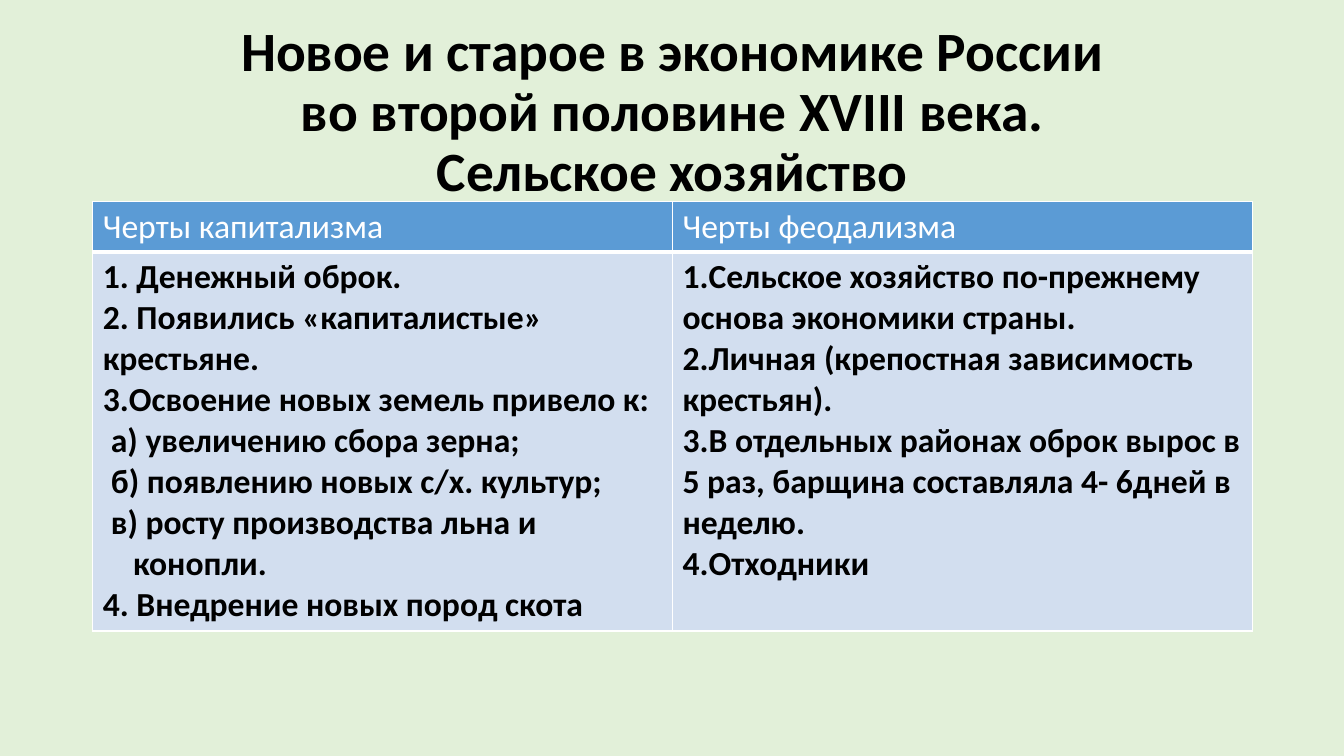
from lxml import etree
from pptx import Presentation
from pptx.dml.color import RGBColor
from pptx.enum.text import MSO_ANCHOR, PP_ALIGN
from pptx.oxml.ns import qn
from pptx.util import Inches, Pt

CENTER, LEFT = PP_ALIGN.CENTER, PP_ALIGN.LEFT
MIDDLE = MSO_ANCHOR.MIDDLE
COLORS = {"background": "E2F0D9", "header": "5B9BD5", "body": "D2DEEF",
          "white": "FFFFFF", "black": "000000"}
WIDTH, HEIGHT = 13.33, 7.5
MARGIN = 0.92
CONTENT_WIDTH = 11.5
ROW_HEIGHTS = [0.5, 3.76]


def write(paragraph, text, size=24, color="black", bold=True, align=LEFT,
          line_spacing=1.0, indent=0):
    paragraph.text = text
    paragraph.alignment = align
    paragraph.line_spacing = line_spacing
    if indent:
        paragraph._p.get_or_add_pPr().set("marL", str(Inches(indent)))
    for run in paragraph.runs:
        run.font.name = "Calibri"
        run.font.size = Pt(size)
        run.font.bold = bold
        run.font.color.rgb = RGBColor.from_string(COLORS[color])


def set_borders(cell, widths):
    properties = cell._tc.get_or_add_tcPr()
    for position, (side, width) in enumerate(zip("LRTB", widths)):
        line = etree.Element(qn(f"a:ln{side}"), w=str(Pt(width)))
        fill = etree.SubElement(line, qn("a:solidFill"))
        etree.SubElement(fill, qn("a:srgbClr"), val=COLORS["white"])
        properties.insert(position, line)


# Slide
presentation = Presentation()
presentation.slide_width = Inches(WIDTH)
presentation.slide_height = Inches(HEIGHT)
slide = presentation.slides.add_slide(presentation.slide_layouts[6])
slide.background.fill.solid()
slide.background.fill.fore_color.rgb = RGBColor.from_string(COLORS["background"])

# Title
title = slide.shapes.add_textbox(Inches(MARGIN), Inches(0.4),
                                 Inches(CONTENT_WIDTH), Inches(1.45))
title.text_frame.word_wrap = True
title.text_frame.vertical_anchor = MIDDLE
write(title.text_frame.paragraphs[0],
      "Новое и старое в экономике России\vво второй половине XVIII века.\v"
      "Сельское хозяйство",
      size=39.6, align=CENTER, line_spacing=0.9)

# Table content: header, then (text, indent) items
columns = [
    ("Черты капитализма", [
        ("1. Денежный оброк.", 0),
        ("2. Появились «капиталистые» крестьяне.", 0),
        ("3.Освоение новых земель привело к:", 0),
        ("а) увеличению сбора зерна;", 0.08),
        ("б) появлению новых с/х. культур;", 0.08),
        ("в) росту производства льна и", 0.08),
        ("конопли.", 0.3),
        ("4. Внедрение новых пород скота", 0),
    ]),
    ("Черты феодализма", [
        ("1.Сельское хозяйство по-прежнему основа экономики страны.", 0),
        ("2.Личная (крепостная зависимость крестьян).", 0),
        ("3.В отдельных районах оброк вырос в 5 раз, барщина составляла "
         "4- 6дней в неделю.", 0),
        ("4.Отходники", 0),
    ]),
]

# Table
table = slide.shapes.add_table(
    len(ROW_HEIGHTS), len(columns), Inches(MARGIN), Inches(2),
    Inches(CONTENT_WIDTH), Inches(sum(ROW_HEIGHTS))).table
for row, height in zip(table.rows, ROW_HEIGHTS):
    row.height = Inches(height)

for column, (heading, items) in enumerate(columns):
    table.columns[column].width = Inches(CONTENT_WIDTH / len(columns))
    header, body = table.cell(0, column), table.cell(1, column)
    for cell, fill, widths in ((header, "header", (1, 1, 1, 3)),
                               (body, "body", (1, 1, 3, 1))):
        cell.fill.solid()
        cell.fill.fore_color.rgb = RGBColor.from_string(COLORS[fill])
        set_borders(cell, widths)

    write(header.text_frame.paragraphs[0], heading, color="white", bold=False)
    for index, (text, indent) in enumerate(items):
        frame = body.text_frame
        paragraph = frame.add_paragraph() if index else frame.paragraphs[0]
        write(paragraph, text, indent=indent)

presentation.save("out.pptx")
